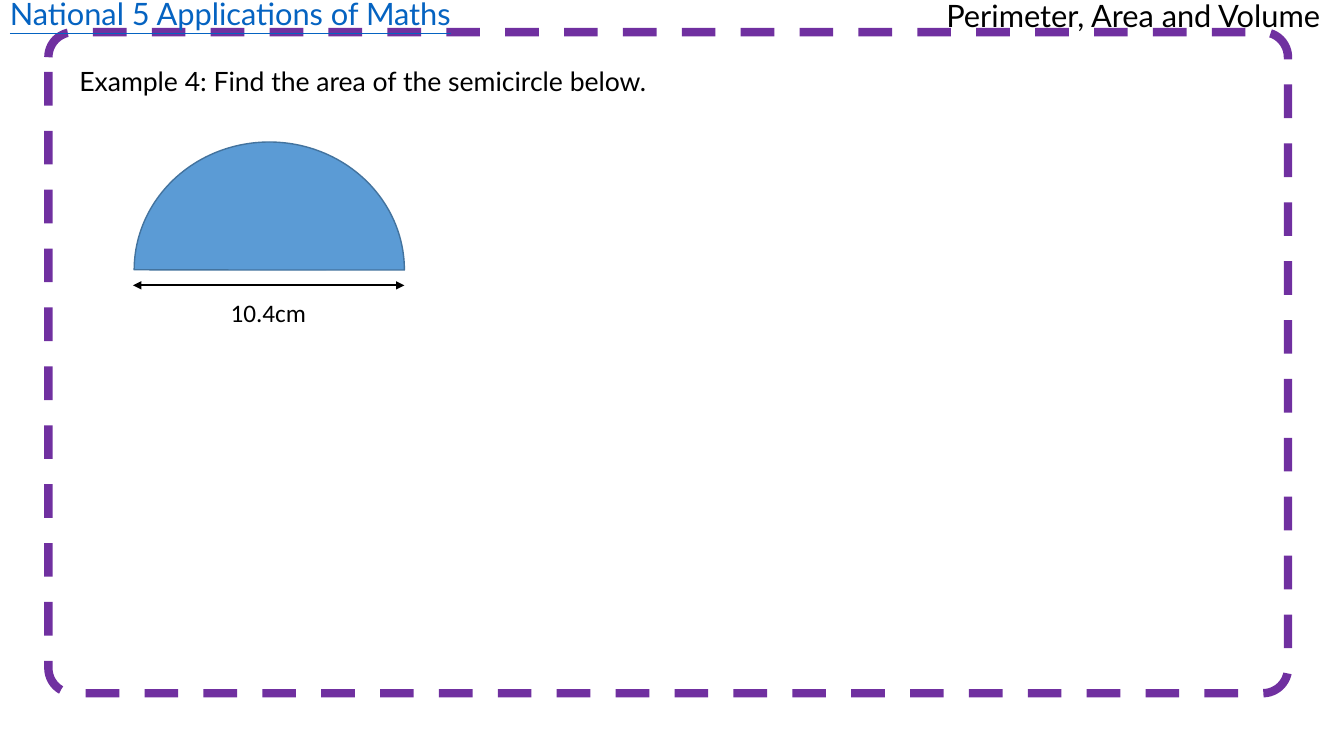
from pptx import Presentation
from pptx.dml.color import RGBColor as Rgb
from pptx.enum.dml import MSO_LINE as Dash
from pptx.enum.shapes import MSO_CONNECTOR as Link, MSO_SHAPE as Shape
from pptx.enum.text import MSO_AUTO_SIZE as Fit
from pptx.oxml.ns import qn
from pptx.util import Cm, Pt
from lxml.etree import SubElement as Sub


def paint(target, color):
    """Give a line or fill a solid colour."""
    target.solid()
    target.fore_color.rgb = Rgb.from_string(color)


def stroke(line, color, width):
    paint(line.fill, color)
    line.width = Pt(width)


def shape(slide, kind, box, adjust, color, width):
    item = slide.shapes.add_shape(kind, *map(Cm, box))
    item.shadow.inherit = False
    item.fill.background()
    for i, value in enumerate(adjust):
        item.adjustments[i] = value
    stroke(item.line, color, width)
    return item


def label(slide, box, text, size, font="Lato", color="000000", wrap=False):
    frame = slide.shapes.add_textbox(*map(Cm, box)).text_frame
    frame.word_wrap = wrap
    frame.auto_size = Fit.SHAPE_TO_FIT_TEXT
    run = frame.paragraphs[0].add_run()
    run.text = text
    run.font.size = Pt(size)
    run.font.name = font
    run.font.color.rgb = Rgb.from_string(color)
    return run


def arrow(slide, left, right, y):
    """Draw a level arrow with a head at each end."""
    ends = map(Cm, (left, y, right, y))
    item = slide.shapes.add_connector(Link.STRAIGHT, *ends)
    stroke(item.line, "000000", 1.5)
    props = item.element.spPr
    for tag in ("a:headEnd", "a:tailEnd"):
        Sub(props.find(qn("a:ln")), qn(tag), type="triangle")
    Sub(props, qn("a:effectLst"))


def main():
    deck = Presentation()
    deck.slide_width, deck.slide_height = Cm(33.87), Cm(19.05)
    slide = deck.slides.add_slide(deck.slide_layouts[6])

    # Dashed border
    border = shape(slide, Shape.ROUNDED_RECTANGLE, (1.22, 0.81, 31.24, 16.66),
                   [0.038], "7030A0", 6)
    border.line.dash_style = Dash.DASH

    # Headings and question
    label(slide, (23.6, -0.2, 10.26, 1.19), "Perimeter, Area and Volume", 22)
    course = label(slide, (0, -0.25, 11.76, 1.19),
                   "National 5 Applications of Maths", 22, color="0563C1")
    course.font.underline = True
    label(slide, (1.75, 1.52, 23.52, 1.07),
          "Example 4: Find the area of the semicircle below.", 19, wrap=True)

    # Semicircle, turned so that its flat side is below
    half = shape(slide, Shape.PIE, (3.56, 3.4, 6.45, 6.81),
                 [54.054, 162], "43739E", 1)
    half.rotation = 90
    paint(half.fill, "5B9BD5")

    # Diameter
    arrow(slide, 3.35, 10.19, 7.19)
    label(slide, (5.56, 7.37, 2.44, 1.02), "10.4cm", 18, "Calibri")

    deck.save("out.pptx")


if __name__ == "__main__":
    main()
